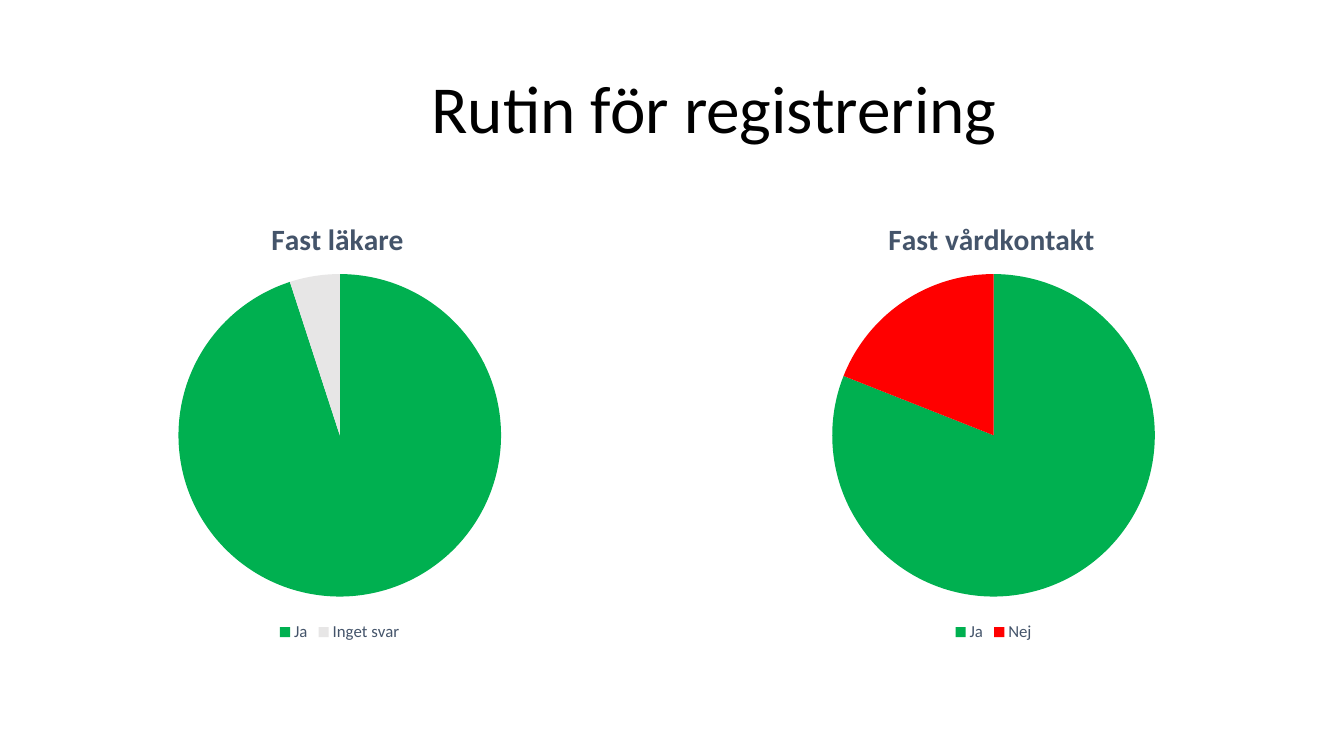
import pptx
import pptx.chart.data
import pptx.dml.color
import pptx.enum.chart
import pptx.enum.text
import pptx.oxml
import pptx.util

WIDTH, HEIGHT = 13.33, 7.5
FONT = "Calibri"
SLATE = "44546A"
CHART_XMLNS = 'xmlns:c="http://schemas.openxmlformats.org/drawingml/2006/chart"'
PIE_SIZE = 3.2  # diameter in inches
PIE_TOP = 0.167  # share of the chart's height
TITLE_TOP = 0.03  # share of the chart's height
SLICE_COLOURS = ["00B050", "FF0000", "FFC000", "E7E6E6"]

# Each chart: title, title width, left, width, answers, percentages
PIES = [
    ("Fast läkare", 1.46, 0.07, 6.6, ["Ja", "", "", "Inget svar"], [95, None, None, 5]),
    ("Fast vårdkontakt", 2.19, 6.01, 7.69, ["Ja", "Nej", "", "Inget svar"], [81, 19, None, None]),
]


def colour(code):
    return pptx.dml.color.RGBColor.from_string(code)


def set_font(font, size, code, bold=False):
    font.name = FONT
    font.size = pptx.util.Pt(size)
    font.bold = bold
    font.color.rgb = colour(code)


def add_heading(page, box, text):
    frame = page.shapes.add_textbox(*map(pptx.util.Inches, box)).text_frame
    frame.word_wrap = True
    frame.auto_size = pptx.enum.text.MSO_AUTO_SIZE.SHAPE_TO_FIT_TEXT
    para = frame.paragraphs[0]
    para.text = text
    set_font(para.font, 48, "000000")


def make_layout(target="", **shares):
    """Manual layout from shares (x, y, w, h) of the chart's box."""
    modes = '<c:xMode val="edge"/><c:yMode val="edge"/>'
    sides = "".join(f'<c:{side} val="{share:.4f}"/>' for side, share in shares.items())
    return pptx.oxml.parse_xml(
        f'<c:layout {CHART_XMLNS}><c:manualLayout>{target}{modes}{sides}'
        '</c:manualLayout></c:layout>')


def place_part(part, layout, position):
    for old in part.findall(layout.tag):
        part.remove(old)
    part.insert(position, layout)


def add_pie(page, box, title, title_width, answers, values):
    width, height = box[2:]
    data = pptx.chart.data.CategoryChartData()
    data.categories = answers
    data.add_series("Series 1", values)
    chart = page.shapes.add_chart(
        pptx.enum.chart.XL_CHART_TYPE.PIE, *map(pptx.util.Inches, box), data).chart
    set_font(chart.font, 10, "000000")

    # Title, centred above the pie
    chart.has_title = True
    para = chart.chart_title.text_frame.paragraphs[0]
    para.text = title
    set_font(para.font, 21, SLATE, bold=True)
    chart.chart_title.include_in_layout = False
    place_part(chart.chart_title._element,
               make_layout(x=(1 - title_width / width) / 2, y=TITLE_TOP), 1)

    # Legend, without the answers nobody gave
    chart.has_legend = True
    chart.legend.position = pptx.enum.chart.XL_LEGEND_POSITION.BOTTOM
    chart.legend.include_in_layout = False
    set_font(chart.legend.font, 12, SLATE)
    unused = [index for index, value in enumerate(values) if value is None]
    for position, index in enumerate(unused, start=1):
        chart.legend._element.insert(position, pptx.oxml.parse_xml(
            f'<c:legendEntry {CHART_XMLNS}><c:idx val="{index}"/>'
            '<c:delete val="1"/></c:legendEntry>'))

    # Slices
    plot = chart.plots[0]
    plot.vary_by_categories = True
    for index, code in enumerate(SLICE_COLOURS):
        slice_format = plot.series[0].points[index].format
        slice_format.fill.solid()
        slice_format.fill.fore_color.rgb = colour(code)
        slice_format.line.fill.background()

    # Pie, centred across the chart at a fixed diameter
    across, down = PIE_SIZE / width, PIE_SIZE / height
    layout = make_layout('<c:layoutTarget val="inner"/>',
                         x=(1 - across) / 2, y=PIE_TOP, w=across, h=down)
    place_part(plot._element.getparent(), layout, 0)


def main():
    deck = pptx.Presentation()
    deck.slide_width = pptx.util.Inches(WIDTH)
    deck.slide_height = pptx.util.Inches(HEIGHT)
    page = deck.slides.add_slide(deck.slide_layouts[6])
    for title, title_width, left, width, answers, values in PIES:
        add_pie(page, (left, 1.98, width, 4.43), title, title_width, answers, values)
    add_heading(page, (4.18, 0.61, 6.96, 0.91), "Rutin för registrering")
    deck.save("out.pptx")


if __name__ == "__main__":
    main()
